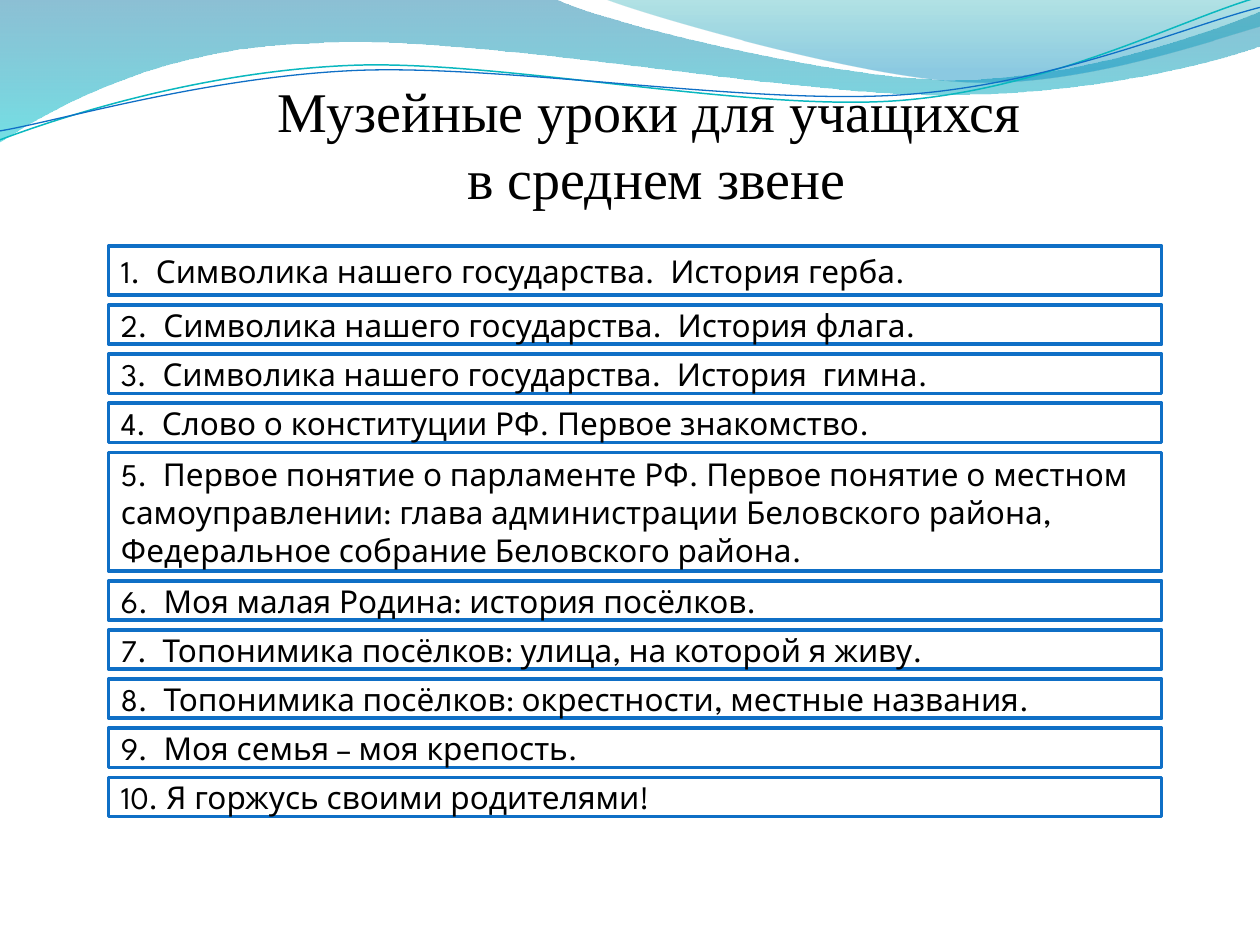
"""Build the slide listing museum lessons for middle school pupils."""
from lxml import etree
from pptx import Presentation
from pptx.dml.color import RGBColor
from pptx.enum import shapes, text
from pptx.oxml.ns import qn
from pptx import util as u

COLORS = {
    "text": "000000", "box": "FFFFFF", "blue": "0F6FC6", "teal": "0AB8BF",
    "wave_top": "0074A1", "wave_bottom": "00C6CF",
    "crest_top": "00A1A9", "crest_bottom": "008BBF",
}

TITLE = ["Музейные уроки для учащихся ", "в среднем звене"]
TITLE_FRAME = (2.59, 1.4, 20.04, 3)
TITLE_INDENT = 1.25

LESSONS = [
    ("1.  Символика нашего государства.  История герба.", 0.99),
    ("2.  Символика нашего государства.  История флага.", 0.79),
    ("3.  Символика нашего государства.  История  гимна.", 0.79),
    ("4.  Слово о конституции РФ. Первое знакомство.", 0.79),
    ("5.  Первое понятие о парламенте РФ. Первое понятие о местном "
     "самоуправлении: глава администрации Беловского района, "
     "Федеральное собрание Беловского района.", 2.39),
    ("6.  Моя малая Родина: история посёлков.", 0.79),
    ("7.  Топонимика посёлков: улица, на которой я живу.", 0.79),
    ("8.  Топонимика посёлков: окрестности, местные названия.", 0.79),
    ("9.  Моя семья – моя крепость.", 0.79),
    ("10. Я горжусь своими родителями!", 0.79),
]
LIST_LEFT, LIST_TOP, LIST_WIDTH, LIST_GAP = 2.19, 4.96, 21.23, 0.2

WAVES = [
    {"start": (0, 0), "stops": [(0, "wave_top", 45), (1, "wave_bottom", 55)],
     "steps": [(11.18, -0.03),
               (12.09, 0.43, 16.87, 1.6, 19.25, 1.6),
               (21.67, 1.6, 24.33, 0.66, 25.4, 0.23),
               (25.43, 0.91),
               (24.97, 1.12, 22.1, 1.93, 18.95, 1.91),
               (15.8, 1.91, 9.7, 0.71, 6.53, 0.86),
               (3.28, 0.91, 1.17, 2.11, -0.03, 2.87),
               (0, 0)]},
    {"start": (12.17, -0.03), "stops": [(0, "crest_top", 30), (0.8, "crest_bottom", 45)],
     "steps": [(12.93, 0.28, 17.32, 1.57, 19.53, 1.65),
               (21.74, 1.75, 24.41, 0.81, 25.4, 0.53),
               (25.4, 0),
               (12.17, -0.03)]},
    {"start": (0, 2.82), "line": ("teal", 0.85),
     "steps": [(1.22, 2.36, 4.01, 1.45, 7.04, 1.32),
               (10.03, 1.19, 15.06, 2.26, 18.11, 2.03),
               (21.16, 1.8, 23.83, 0.38, 25.35, -0.05)]},
    {"start": (0, 2.64), "line": ("blue", 0.75),
     "steps": [(1.19, 2.44, 4.17, 1.55, 7.19, 1.42),
               (10.24, 1.3, 15.16, 2.13, 18.21, 1.91),
               (21.23, 1.7, 23.9, 0.53, 25.4, 0.15)]},
]

TITLE_FONT = {"name": "Times New Roman", "size": u.Pt(32), "bold": False}
LESSON_FONT = {"name": "League Spartan", "size": u.Pt(18), "bold": False}
TITLE_PARAGRAPH = {"alignment": text.PP_ALIGN.CENTER, "line_spacing": 1.0}
LESSON_PARAGRAPH = {"alignment": text.PP_ALIGN.LEFT}
FRAME = {"word_wrap": True, "vertical_anchor": text.MSO_ANCHOR.MIDDLE,
         "auto_size": text.MSO_AUTO_SIZE.NONE}


def color(name):
    return RGBColor.from_string(COLORS[name])


def apply(target, values):
    for name, value in values.items():
        setattr(target, name, value)


def write(shape, lines, font, paragraph_format):
    frame = shape.text_frame
    frame.text = "\n".join(lines)
    apply(frame, FRAME)
    for paragraph in frame.paragraphs:
        apply(paragraph, paragraph_format)
        for run in paragraph.runs:
            apply(run.font, font)
            run.font.color.rgb = color("text")


def set_line(shape, name, width):
    shape.line.color.rgb = color(name)
    shape.line.width = u.Pt(width)


def bend(shape, steps):
    """Join the straight segments of each six-value step into one curve."""
    segments = iter(shape.element.xpath(".//a:path/a:lnTo"))
    for step in steps:
        parts = [next(segments) for _ in range(len(step) // 2)]
        if len(parts) == 3:
            curve = etree.Element(qn("a:cubicBezTo"))
            parts[0].addprevious(curve)
            for part in parts:
                curve.append(part[0])
                part.getparent().remove(part)


def add_wave(slide, wave):
    steps = wave["steps"]
    points = [(u.Cm(step[i]), u.Cm(step[i + 1])) for step in steps for i in range(0, len(step), 2)]
    builder = slide.shapes.build_freeform(*map(u.Cm, wave["start"]))
    builder.add_line_segments(points, close="stops" in wave)
    shape = builder.convert_to_shape()
    bend(shape, steps)
    shape.shadow.inherit = False
    if "line" in wave:
        shape.fill.background()
        set_line(shape, *wave["line"])
        return
    shape.line.fill.background()
    shape.fill.gradient()
    shape.fill.gradient_angle = 270
    for stop, (position, name, _) in zip(shape.fill.gradient_stops, wave["stops"]):
        stop.position = position
        stop.color.rgb = color(name)
    tints = shape.element.xpath(".//a:gs/a:srgbClr")
    for tint, (_, _, opacity) in zip(tints, wave["stops"]):
        etree.SubElement(tint, qn("a:alpha"), val=str(opacity * 1000))


def add_title(slide):
    title = slide.shapes.title
    title.left, title.top, title.width, title.height = map(u.Cm, TITLE_FRAME)
    write(title, TITLE, TITLE_FONT, TITLE_PARAGRAPH)
    for properties in title.element.iter(qn("a:pPr")):
        properties.set("indent", str(u.Cm(TITLE_INDENT)))
    title.element.getparent().append(title.element)


def add_lessons(slide):
    top = LIST_TOP
    for lesson, height in LESSONS:
        box = slide.shapes.add_shape(shapes.MSO_SHAPE.RECTANGLE, u.Cm(LIST_LEFT), u.Cm(top),
                                     u.Cm(LIST_WIDTH), u.Cm(height))
        box.shadow.inherit = False
        box.fill.solid()
        box.fill.fore_color.rgb = color("box")
        set_line(box, "blue", 2)
        write(box, [lesson], LESSON_FONT, LESSON_PARAGRAPH)
        top += height + LIST_GAP


def main():
    presentation = Presentation()
    presentation.slide_width, presentation.slide_height = u.Cm(25.4), u.Cm(19.05)
    slide = presentation.slides.add_slide(presentation.slide_layouts.get_by_name("Title Only"))
    for wave in WAVES:
        add_wave(slide, wave)
    add_title(slide)
    add_lessons(slide)
    presentation.save("out.pptx")


if __name__ == "__main__":
    main()
